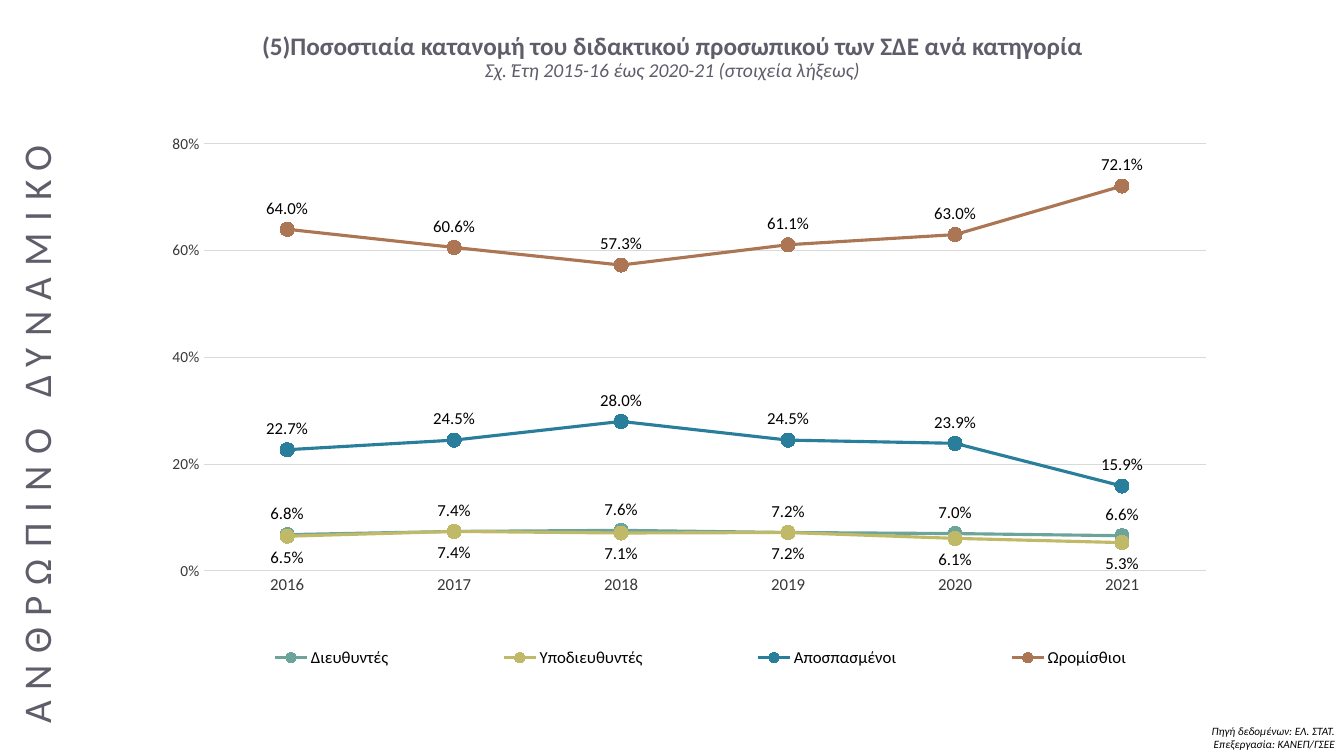
from lxml import etree
from pptx import Presentation
from pptx.chart.data import CategoryChartData
from pptx.dml.color import RGBColor
from pptx.enum.chart import XL_CHART_TYPE as ChartType, XL_LABEL_POSITION as LabelPos
from pptx.enum.chart import XL_LEGEND_POSITION as LegendPos, XL_MARKER_STYLE as Marker
from pptx.enum.chart import XL_TICK_MARK as Tick
from pptx.enum.text import MSO_ANCHOR as Anchor, PP_ALIGN as Align
from pptx.oxml.ns import qn
from pptx.util import Emu, Pt

BLACK = RGBColor(0x00, 0x00, 0x00)
SLATE = RGBColor(0x5F, 0x5D, 0x6A)
AXIS_TEXT = RGBColor(0x3B, 0x38, 0x38)
GRID = RGBColor(0xD9, 0xD9, 0xD9)
TEAL = RGBColor(0x6C, 0xA4, 0x9B)
OLIVE = RGBColor(0xC0, 0xBA, 0x68)
BLUE = RGBColor(0x29, 0x7E, 0x9B)
BROWN = RGBColor(0xAC, 0x76, 0x54)

YEARS = ["2016", "2017", "2018", "2019", "2020", "2021"]
STAFF = [
    ("Διευθυντές", TEAL, LabelPos.ABOVE, [0.068, 0.074, 0.076, 0.072, 0.07, 0.066]),
    ("Υποδιευθυντές", OLIVE, LabelPos.BELOW, [0.065, 0.074, 0.071, 0.072, 0.061, 0.053]),
    ("Αποσπασμένοι", BLUE, LabelPos.ABOVE, [0.227, 0.245, 0.28, 0.245, 0.239, 0.159]),
    ("Ωρομίσθιοι", BROWN, LabelPos.ABOVE, [0.64, 0.606, 0.573, 0.611, 0.63, 0.721]),
]


class SlideBuilder:
    FONT = "Calibri"
    SCALE = 914400 / 100.8

    def __init__(self, deck):
        self.slide = deck.slides.add_slide(deck.slide_layouts[6])

    @classmethod
    def px(cls, *lengths):
        return [Emu(round(length * cls.SCALE)) for length in lengths]

    def style(self, font, size, color, bold=False, italic=False):
        font.name, font.size = self.FONT, Pt(size)
        font.bold, font.italic = bold, italic
        font.color.rgb = color

    def text(self, place, lines, color, align=Align.CENTER, anchor=Anchor.MIDDLE,
             line_spacing=0.9, rotation=0, tracking=0):
        """Each line is (text, size, bold, italic)."""
        box = self.slide.shapes.add_textbox(*self.px(*place))
        box.rotation = rotation
        frame = box.text_frame
        frame.word_wrap, frame.vertical_anchor = True, anchor
        para = frame.paragraphs[0]
        para.alignment, para.line_spacing = align, line_spacing
        for index, (words, size, bold, italic) in enumerate(lines):
            if index:
                para.add_line_break()
            span = para.add_run()
            span.text = words
            self.style(span.font, size, color, bold, italic)
            if tracking:
                span.font._element.set("spc", str(tracking * 100))

    def layout(self, parent, place, inner=False):
        """Fix the place of a chart part, in fractions of the chart."""
        for old in parent.findall(qn("c:layout")):
            parent.remove(old)
        layout = etree.Element(qn("c:layout"))
        manual = etree.SubElement(layout, qn("c:manualLayout"))
        settings = [("layoutTarget", "inner")] if inner else []
        settings += [("xMode", "edge"), ("yMode", "edge"), *zip("xywh", place)]
        for name, value in settings:
            etree.SubElement(manual, qn(f"c:{name}")).set("val", str(value))
        parent.insert(0 if inner else 1, layout)

    def line_chart(self, place, categories, rows):
        data = CategoryChartData(number_format="0.0%")
        data.categories = categories
        for name, _, _, values in rows:
            data.add_series(name, values)
        chart = self.slide.shapes.add_chart(
            ChartType.LINE_MARKERS, *self.px(*place), data).chart
        chart.has_title = False
        self.style(chart.font, 10, BLACK)
        plot = chart.plots[0]
        plot.vary_by_categories = False

        # Axes and gridlines
        years, share = chart.category_axis, chart.value_axis
        for axis, size in ((years, 12), (share, 11)):
            axis.major_tick_mark = axis.minor_tick_mark = Tick.NONE
            self.style(axis.tick_labels.font, size, AXIS_TEXT)
        share.minimum_scale, share.maximum_scale, share.major_unit = 0, 0.8, 0.2
        share.tick_labels.number_format = "0%"
        share.tick_labels.number_format_is_linked = False
        share.format.line.fill.background()
        for line in (years.format.line, share.major_gridlines.format.line):
            line.color.rgb, line.width = GRID, Pt(0.75)

        # Series
        for series, (_, color, position, _) in zip(plot.series, rows):
            series.smooth = False
            series.format.line.color.rgb = color
            series.format.line.width = Pt(2.25)
            marker = series.marker
            marker.style, marker.size = Marker.CIRCLE, 10
            marker.format.fill.solid()
            marker.format.fill.fore_color.rgb = color
            marker.format.line.color.rgb = color
            labels = series.data_labels
            labels.show_value, labels.position = True, position
            labels.number_format, labels.number_format_is_linked = "0.0%", False
            self.style(labels.font, 12, BLACK)

        # Legend and plot area
        chart.has_legend = True
        legend = chart.legend
        legend.position, legend.include_in_layout = LegendPos.BOTTOM, False
        self.style(legend.font, 12, BLACK)
        self.layout(legend._element, (0.05, 0.88, 0.95, 0.08))
        plot_area = chart._chartSpace.chart.plotArea
        self.layout(plot_area, (0.084, 0.049, 0.889, 0.724), inner=True)


def main():
    deck = Presentation()
    deck.slide_width, deck.slide_height = SlideBuilder.px(1344, 756)
    page = SlideBuilder(deck)

    # Source note
    page.text((745, 719, 600, 37),
              [("Πηγή δεδομένων: ΕΛ. ΣΤΑΤ.", 8, False, True),
               ("Επεξεργασία: ΚΑΝΕΠ/ΓΣΕΕ", 8, False, True)],
              BLACK, Align.RIGHT, Anchor.TOP, line_spacing=1.0)

    # Title and subtitle
    page.text((93, 0, 1159, 115),
              [("(5)Ποσοστιαία κατανομή του διδακτικού προσωπικού των ΣΔΕ ανά κατηγορία",
                18, True, False),
               ("Σχ. Έτη 2015-16 έως 2020-21 (στοιχεία λήξεως)", 14, False, True)],
              SLATE)

    # Staff shares by year
    page.line_chart((109, 115, 1127, 590), YEARS, STAFF)

    # Vertical section heading
    page.text((-302, 377, 681, 115), [("ΑΝΘΡΩΠΙΝΟ ΔΥΝΑΜΙΚΟ", 28, False, False)],
              SLATE, rotation=270, tracking=8)

    deck.save("out.pptx")


if __name__ == "__main__":
    main()
